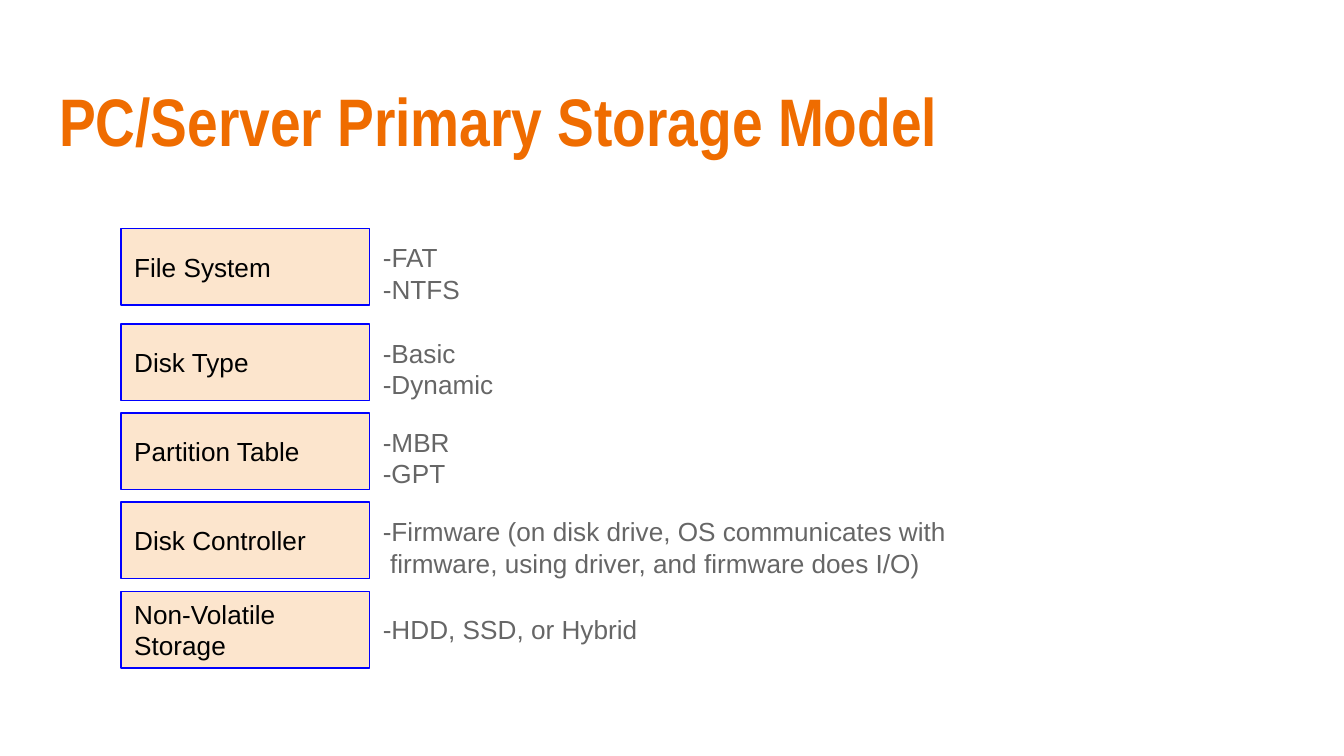
"""Build the PC/server primary storage model slide: layers with their examples."""
import pptx
import pptx.dml.color
import pptx.enum.shapes
import pptx.enum.text
import pptx.util

ORANGE = pptx.dml.color.RGBColor(0xEF, 0x6C, 0x00)
PEACH = pptx.dml.color.RGBColor(0xFC, 0xE5, 0xCD)
BLUE = pptx.dml.color.RGBColor(0x00, 0x00, 0xFF)
BLACK = pptx.dml.color.RGBColor(0x00, 0x00, 0x00)
GRAY = pptx.dml.color.RGBColor(0x66, 0x66, 0x66)
INCH = pptx.util.Inches(1)
MIDDLE = pptx.enum.text.MSO_ANCHOR.MIDDLE
TOP = pptx.enum.text.MSO_ANCHOR.TOP


def write(box, lines, font, size, color, anchor, bold=False):
    frame = box.text_frame
    frame.word_wrap = True
    frame.auto_size = pptx.enum.text.MSO_AUTO_SIZE.NONE
    frame.vertical_anchor = anchor
    frame.margin_left = frame.margin_right = int(0.1 * INCH)
    frame.margin_top = frame.margin_bottom = int(0.1 * INCH)
    for index, line in enumerate(lines):
        para = frame.paragraphs[0] if index == 0 else frame.add_paragraph()
        para.alignment = pptx.enum.text.PP_ALIGN.LEFT
        span = para.add_run()
        span.text = line
        span.font.name = font
        span.font.size = pptx.util.Pt(size)
        span.font.bold = bold
        span.font.color.rgb = color


deck = pptx.Presentation()
deck.slide_width = 10 * INCH
deck.slide_height = deck.slide_width * 9 // 16
page = deck.slides.add_slide(deck.slide_layouts[5])

title = page.shapes.title
title.left, title.top = int(0.34 * INCH), int(0.49 * INCH)
title.width, title.height = int(9.32 * INCH), int(0.77 * INCH)
write(title, ["PC/Server Primary Storage Model"], "Arial Narrow", 36, ORANGE, TOP, True)

layer_left, layer_width, layer_height = 0.9, 1.85, 0.57
first_top, second_top, last_top = 1.7, 2.41, 4.4
row_pitch = (last_top - second_top) / 3
layers = [
    ("File System", ["-FAT", "-NTFS"], 0.78),
    ("Disk Type", ["-Basic", "-Dynamic"], 1.1),
    ("Partition Table", ["-MBR", "-GPT"], 0.73),
    ("Disk Controller", ["-Firmware (on disk drive, OS communicates with",
                         " firmware, using driver, and firmware does I/O)"], 4.46),
    ("Non-Volatile Storage", ["-HDD, SSD, or Hybrid"], 3.77),
]

for row, (name, examples, note_width) in enumerate(layers):
    top = second_top + (row - 1) * row_pitch if row else first_top
    layer = page.shapes.add_shape(
        pptx.enum.shapes.MSO_SHAPE.RECTANGLE,
        int(layer_left * INCH), int(top * INCH),
        int(layer_width * INCH), int(layer_height * INCH))
    layer.shadow.inherit = False
    layer.fill.solid()
    layer.fill.fore_color.rgb = PEACH
    layer.line.color.rgb = BLUE
    layer.line.width = pptx.util.Pt(0.75)
    write(layer, [name], "Arial", 14, BLACK, MIDDLE)

    note_height = layer_height if len(examples) > 1 else 0.44
    note_top = top + (layer_height - note_height) / 2
    note = page.shapes.add_textbox(
        int((layer_left + layer_width) * INCH), int(note_top * INCH),
        int(note_width * INCH), int(note_height * INCH))
    write(note, examples, "Arial", 14, GRAY, TOP)

deck.save("out.pptx")
